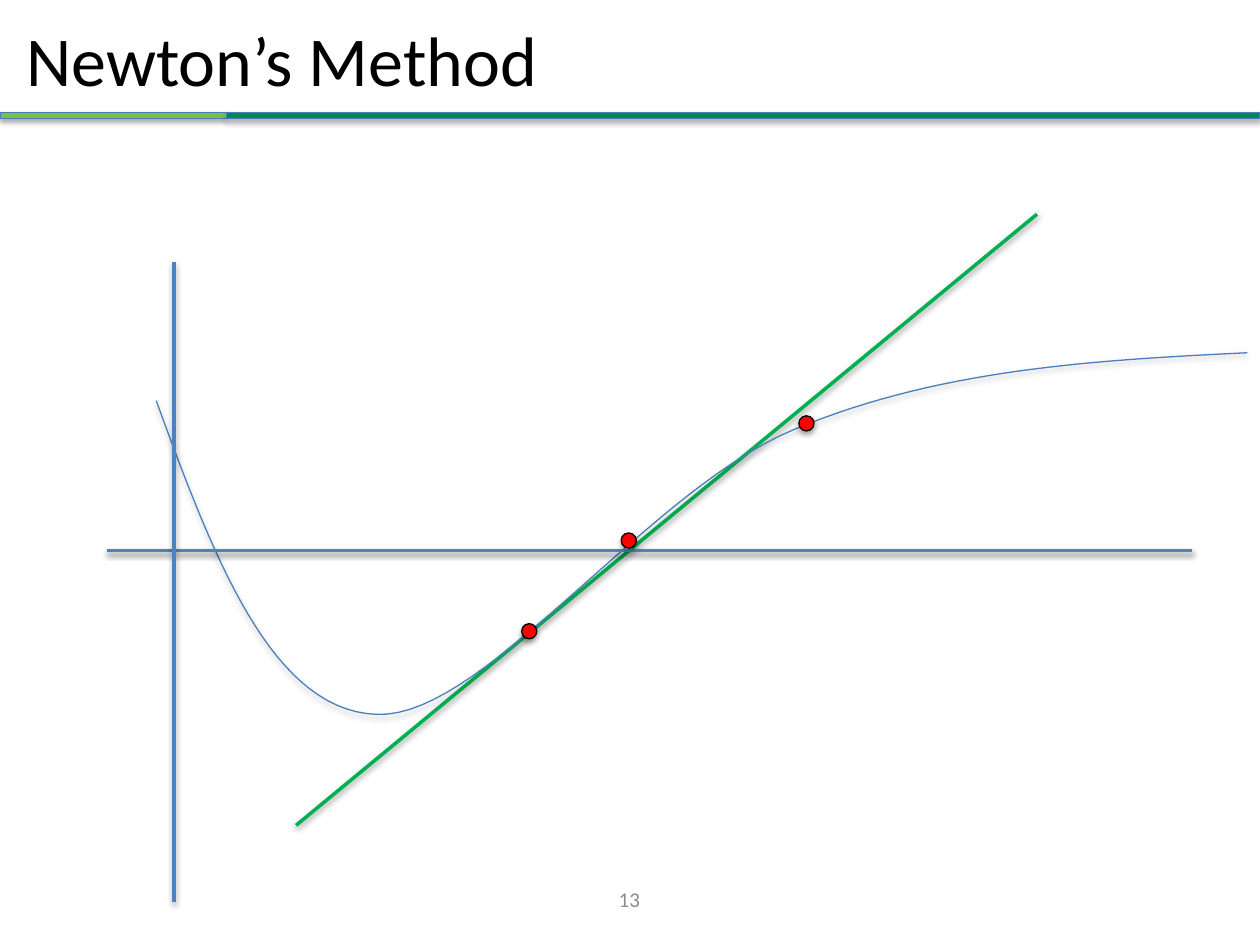
from lxml import etree
from pptx import Presentation
from pptx.dml.color import RGBColor
from pptx.enum.shapes import MSO_CONNECTOR, MSO_SHAPE
from pptx.enum.text import MSO_ANCHOR, PP_ALIGN
from pptx.oxml.ns import qn
from pptx.util import Inches, Pt

RECT, OVAL = MSO_SHAPE.RECTANGLE, MSO_SHAPE.OVAL
STRAIGHT = MSO_CONNECTOR.STRAIGHT
MIDDLE = MSO_ANCHOR.MIDDLE
LEFT, CENTER = PP_ALIGN.LEFT, PP_ALIGN.CENTER

FONT = "Calibri"
COLORS = {
    "lime": "7AC043", "green": "018752", "tangent": "00B050",
    "axis": "4F81BD", "outline": "4B7EBC", "red": "FF0000",
    "black": "000000", "gray": "8C8C8C",
}
DOT_SIZE = 0.12
ROOT_GUESSES = [(4.99, 4.29), (6.4, 3.36), (4.2, 5.01)]
CURVE_START = (1.24, 3.18)
CURVE_SEGMENTS = [
    [(1.69, 4.41), (2.15, 5.64), (2.99, 5.67)],
    [(3.83, 5.71), (5.14, 3.89), (6.3, 3.41)],
    [(7.45, 2.93), (8.67, 2.86), (9.9, 2.8)],
]
STEPS = 30


def color(name):
    return RGBColor.from_string(COLORS[name])


def set_line(shape, name, width):
    shape.line.color.rgb = color(name)
    shape.line.width = Pt(width)


def add_shadow(shape, opacity=35, distance=1.8):
    """Append a soft downward shadow; call after fill and line are set."""
    effects = etree.SubElement(shape._element.spPr, qn("a:effectLst"))
    shadow = etree.SubElement(
        effects, qn("a:outerShdw"), blurRad=str(Pt(3.15)),
        dist=str(Pt(distance)), dir="5400000", rotWithShape="0")
    black = etree.SubElement(shadow, qn("a:srgbClr"), val=COLORS["black"])
    etree.SubElement(black, qn("a:alpha"), val=str(opacity * 1000))


def add_filled(s, kind, x, y, w, h, fill, outline):
    sp = s.shapes.add_shape(kind, Inches(x), Inches(y), Inches(w), Inches(h))
    sp.fill.solid()
    sp.fill.fore_color.rgb = color(fill)
    set_line(sp, outline, 0.75)
    add_shadow(sp)


def add_line(s, start, end, name):
    line = s.shapes.add_connector(
        STRAIGHT, *(Inches(v) for v in (*start, *end)))
    set_line(line, name, 2)
    add_shadow(line, 38, 1.6)


def bezier_points(start, segments):
    """Sample a chain of cubic Bezier segments."""
    points = []
    for a, b, end in segments:
        for i in range(1, STEPS + 1):
            t = i / STEPS
            u = 1 - t
            points.append(tuple(
                Inches(u**3 * p0 + 3 * u * u * t * p1 + 3 * u * t * t * p2 + t**3 * p3)
                for p0, p1, p2, p3 in zip(start, a, b, end)))
        start = end
    return points


def add_curve(s):
    x, y = CURVE_START
    builder = s.shapes.build_freeform(Inches(x), Inches(y))
    builder.add_line_segments(bezier_points(CURVE_START, CURVE_SEGMENTS), close=False)
    sp = builder.convert_to_shape()
    sp.fill.background()
    set_line(sp, "outline", 0.75)
    add_shadow(sp)


def set_text(shape, text, size, name, align):
    tf = shape.text_frame
    tf.word_wrap = True
    tf.vertical_anchor = MIDDLE
    p = tf.paragraphs[0]
    p.text = text
    p.alignment = align
    p.font.name = FONT
    p.font.size = Pt(size)
    p.font.color.rgb = color(name)


def add_title(s, text):
    title = s.shapes.title
    title.left, title.top = Inches(0.11), Inches(0.1)
    title.width, title.height = Inches(9.7), Inches(0.73)
    set_text(title, text, 40, "black", LEFT)


def add_page_number(s, text):
    box = s.shapes.add_textbox(Inches(4.51), Inches(6.94), Inches(0.97), Inches(0.4))
    set_text(box, text, 12, "gray", CENTER)


def main():
    prs = Presentation()
    prs.slide_width, prs.slide_height = Inches(10), Inches(7.5)
    s = prs.slides.add_slide(prs.slide_layouts[5])

    add_title(s, "Newton’s Method")
    add_filled(s, RECT, 0, 0.89, 1.8, 0.05, "lime", "outline")
    add_filled(s, RECT, 1.8, 0.89, 8.2, 0.05, "green", "outline")

    add_line(s, (2.35, 6.55), (8.23, 1.7), "tangent")
    add_curve(s)
    add_page_number(s, "13")
    add_line(s, (0.85, 4.37), (9.46, 4.37), "axis")
    add_line(s, (1.38, 2.08), (1.38, 7.16), "axis")
    for x, y in ROOT_GUESSES:
        add_filled(s, OVAL, x - DOT_SIZE / 2, y - DOT_SIZE / 2,
                   DOT_SIZE, DOT_SIZE, "red", "black")

    prs.save("out.pptx")


if __name__ == "__main__":
    main()
